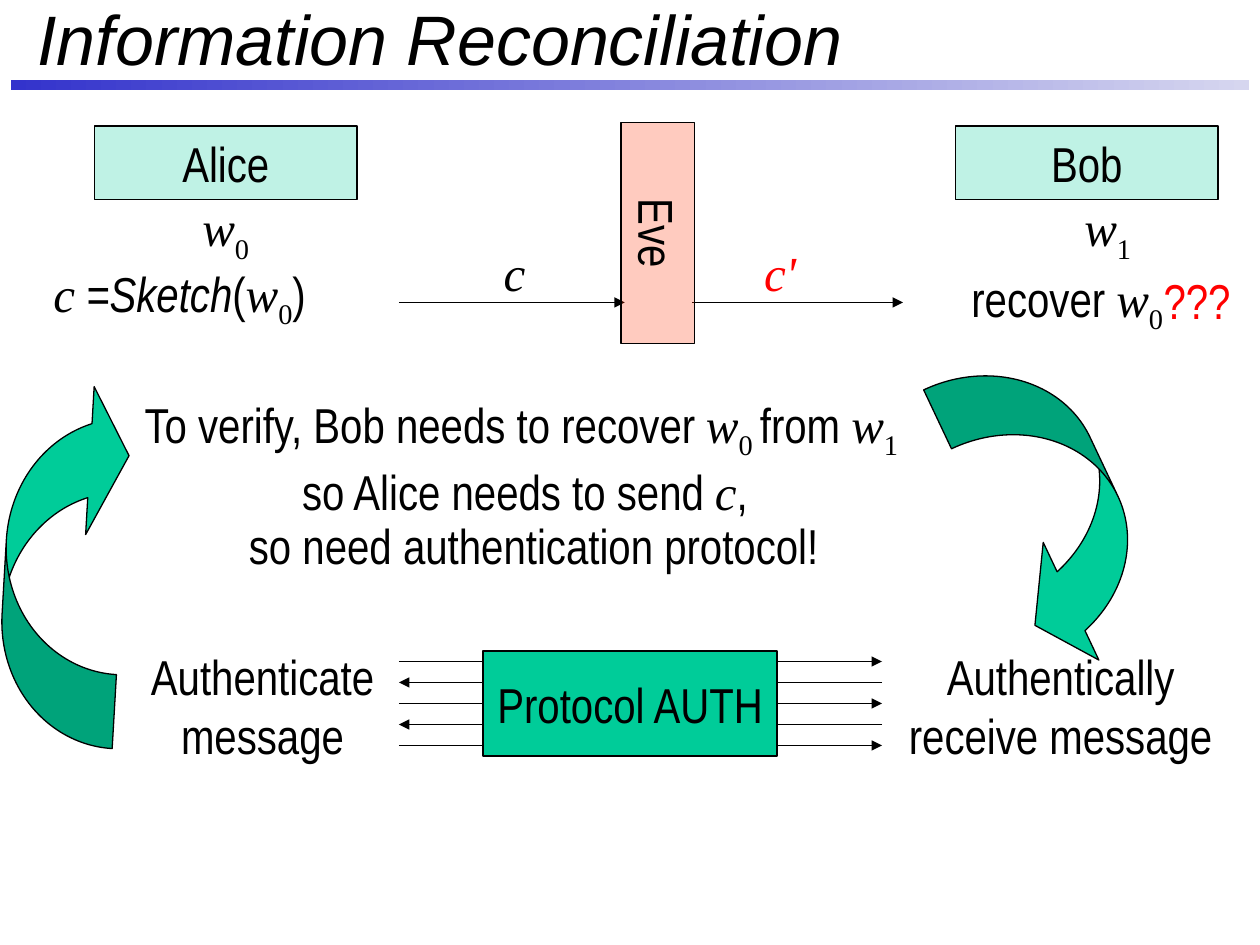
from lxml.etree import SubElement
from pptx import Presentation
from pptx.dml.color import RGBColor
from pptx.enum.shapes import MSO_CONNECTOR as Connector, MSO_SHAPE as Shape
from pptx.enum.text import MSO_ANCHOR as Anchor, PP_ALIGN as Align
from pptx.oxml.ns import qn
from pptx.util import Inches, Pt

COLORS = {"black": "000000", "red": "FF0000", "green": "00CC99", "orange": "FF3300",
          "bar_start": "3333CC", "bar_end": "D6D6EF"}
UNITS_PER_INCH = 12
NARROW, SERIF = "Arial Narrow", "Times New Roman"
STYLES = {"plain": (NARROW, False, False), "slanted": (NARROW, True, False),
          "math": (SERIF, True, False), "sub": (SERIF, False, True)}


def grid(*units):
    return [Inches(unit / UNITS_PER_INCH) for unit in units]


def rgb(name):
    return RGBColor.from_string(COLORS[name])


def set_line(line):
    line.color.rgb = rgb("black")
    line.width = Pt(0.75)


def write(frame, parts, color="black", wrap=True):
    frame.word_wrap = wrap
    paragraph = frame.paragraphs[0]
    paragraph.alignment = Align.CENTER
    paragraph.font.size = Pt(28)
    paragraph.font.color.rgb = rgb(color)
    for text, style in parts:
        if text == "\n":
            paragraph.add_line_break()
            continue
        run = paragraph.add_run()
        run.text = text
        run.font.name, run.font.italic, lowered = STYLES[style]
        if lowered:
            run.font._element.set("baseline", "-25000")


def add_text(slide, area, *parts, color="black", wrap=True):
    box = slide.shapes.add_textbox(*grid(*area))
    write(box.text_frame, parts, color, wrap)


def add_filled(slide, kind, area, color, alpha=None, rotation=0):
    shape = slide.shapes.add_shape(kind, *grid(*area))
    shape.shadow.inherit = False
    shape.rotation = rotation
    shape.fill.solid()
    shape.fill.fore_color.rgb = rgb(color)
    if alpha:
        fill_color = shape._element.spPr.find(qn("a:solidFill"))[0]
        SubElement(fill_color, qn("a:alpha"), val=str(alpha * 1000))
    set_line(shape.line)
    return shape


def add_party(slide, area, name, color="green", alpha=None, rotation=0):
    shape = add_filled(slide, Shape.RECTANGLE, area, color, alpha, rotation)
    shape.text_frame.vertical_anchor = Anchor.MIDDLE
    write(shape.text_frame, [(name, "plain")], wrap=False)


def add_curved_arrow(slide, area, rotation, adjustments):
    shape = add_filled(slide, Shape.CURVED_LEFT_ARROW, area, "green", rotation=rotation)
    for index, value in enumerate(adjustments):
        shape.adjustments[index] = value


def add_arrow(slide, start, end, row):
    arrow = slide.shapes.add_connector(Connector.STRAIGHT, *grid(start, row, end, row))
    set_line(arrow.line)
    SubElement(arrow.line._get_or_add_ln(), qn("a:tailEnd"), type="triangle")
    SubElement(arrow._element.spPr, qn("a:effectLst"))


def add_title(slide, text):
    bar = slide.shapes.add_shape(Shape.RECTANGLE, *grid(1, 7.6, 118, 0.95))
    bar.shadow.inherit = False
    bar.line.fill.background()
    bar.fill.gradient()
    bar.fill.gradient_angle = 0
    for stop, position, name in zip(bar.fill.gradient_stops, (0, 1), ("bar_start", "bar_end")):
        stop.position = position
        stop.color.rgb = rgb(name)
    frame = slide.shapes.add_textbox(*grid(2.4, 0.8, 107.5, 5.6)).text_frame
    frame.word_wrap = True
    frame.vertical_anchor = Anchor.MIDDLE
    paragraph = frame.paragraphs[0]
    paragraph.text = text
    paragraph.font.name = "Arial"
    paragraph.font.size = Pt(40)
    paragraph.font.italic = True
    paragraph.font.color.rgb = rgb("black")


def add_exchange(slide):
    w, zero, one = ("w", "math"), ("0", "sub"), ("1", "sub")
    add_party(slide, (9, 12, 25, 7), "Alice", alpha=25)
    add_party(slide, (91, 12, 25, 7), "Bob", alpha=25)
    add_text(slide, (17, 18.25, 9, 6.8), w, zero)
    add_text(slide, (99, 18.25, 13, 6.8), w, one)
    add_arrow(slide, 38, 59.5, 28.8)
    add_arrow(slide, 65.9, 86, 28.8)
    add_text(slide, (43, 22.5, 12, 6.8), ("c", "math"))
    add_text(slide, (68.3, 22.5, 12, 6.8), ("c'", "math"), color="red")
    add_text(slide, (91.1, 25, 21.1, 6.8), ("recover ", "plain"), w, zero, wrap=False)
    add_text(slide, (109, 25.2, 10, 6.8), ("???", "plain"), color="red")
    add_party(slide, (52.1, 18.7, 21.1, 7), "Eve", "orange", 25, 90)
    add_text(slide, (3.7, 24.5, 26.8, 6.8), ("c", "math"), (" =Sketch", "slanted"),
             ("(", "plain"), w, zero, (")", "plain"), wrap=False)


def add_explanation(slide):
    add_text(slide, (8, 37, 84, 12.5),
             ("To verify, Bob needs to recover ", "plain"), ("w", "math"), ("0 ", "sub"),
             ("from ", "plain"), ("w", "math"), ("1 ", "sub"), ("\n", "plain"),
             ("so Alice needs to send ", "plain"), ("c", "math"), (",", "plain"))
    add_text(slide, (20.8, 48.5, 60, 6.8), ("so need authentication protocol!", "plain"))


def add_protocol(slide):
    left, right = 38, 84
    for index in range(5):
        start, end = (right, left) if index % 2 else (left, right)
        add_arrow(slide, start, end, 63 + 2 * index)
    add_text(slide, (12, 61, 26, 12.4), ("Authenticate message", "plain"))
    add_text(slide, (85, 61, 32, 12.4), ("Authentically receive message", "plain"))
    add_party(slide, (46, 62, 28, 10), "Protocol AUTH")
    add_curved_arrow(slide, (0.5, 36, 11.2, 35), 183.3, (0.63, 1.26, 0.33))
    add_curved_arrow(slide, (94, 33, 12.4, 31), 334.7, (0.5, 1, 0.33))


def main():
    presentation = Presentation()
    presentation.slide_width, presentation.slide_height = Inches(10), Inches(7.5)
    slide = presentation.slides.add_slide(presentation.slide_layouts[6])
    add_title(slide, "Information Reconciliation")
    add_exchange(slide)
    add_explanation(slide)
    add_protocol(slide)
    presentation.save("out.pptx")


if __name__ == "__main__":
    main()
